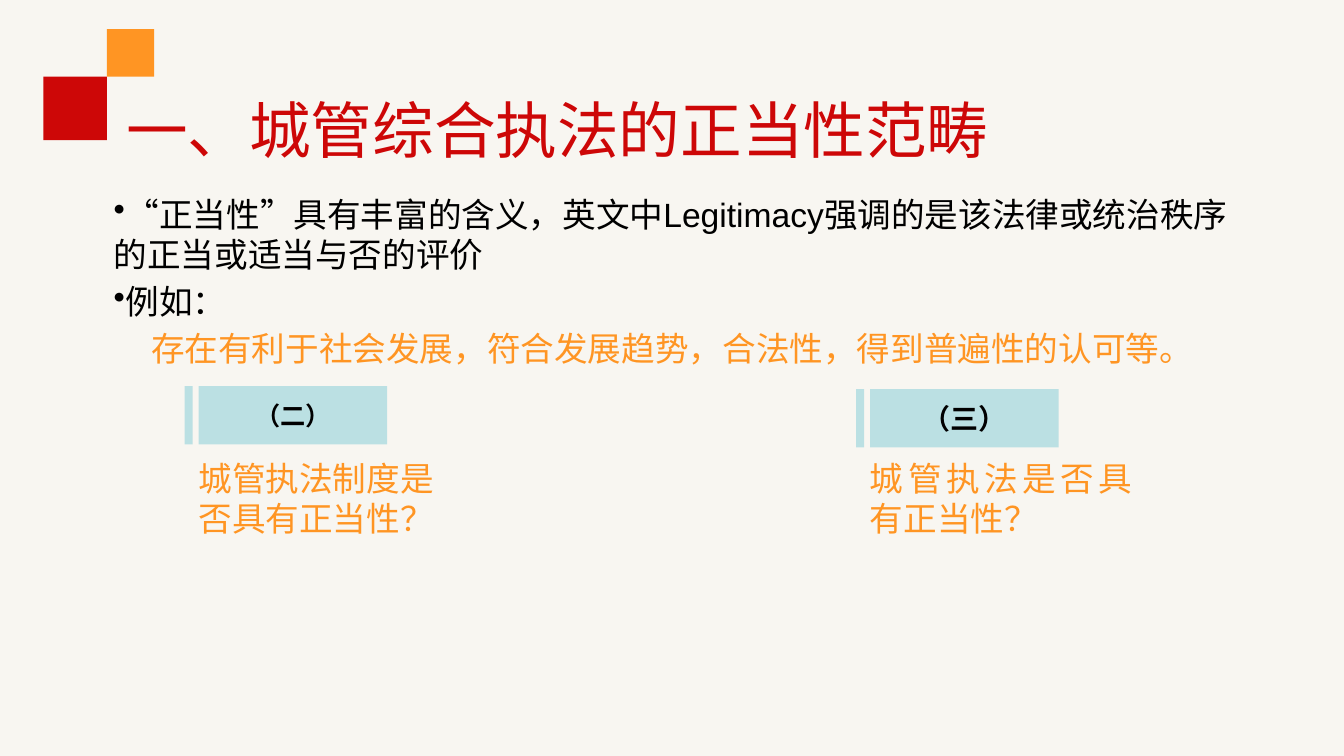
from lxml import etree
from pptx import Presentation
from pptx.dml.color import RGBColor
from pptx.enum import shapes, text
from pptx.oxml.ns import qn
from pptx.util import Inches, Pt

RED, ORANGE, BLUE, BLACK, CREAM = "CD0707", "FF9523", "BBE0E3", "000000", "F8F6F1"
FONT = "Arial"

# Content
TITLE = "一、城管综合执法的正当性范畴"
BODY = [  # wording, colour, bulleted, first-line indent
    ("“正当性”具有丰富的含义，英文中Legitimacy强调的是该法律或统治秩序的正当或适当与否的评价", BLACK, True, 0),
    ("例如：", BLACK, True, 0),
    ("存在有利于社会发展，符合发展趋势，合法性，得到普遍性的认可等。", ORANGE, False, 0.37),
]
LEFT, JUSTIFY = text.PP_ALIGN.LEFT, text.PP_ALIGN.JUSTIFY
CARDS = [  # left, top, label, label size, question, alignment
    (1.83, 3.83, "（二）", 18, "城管执法制度是否具有正当性？", LEFT),
    (8.49, 3.86, "（三）", 20, "城管执法是否具有正当性？", JUSTIFY),
]
QUESTION_TOP = 4.49
SQUARES = [(0.43, 0.76, 0.63, RED), (1.06, 0.29, 0.47, ORANGE)]


def colour(value):
    return RGBColor.from_string(value)


def add_block(page, left, top, width, height, fill):
    block = page.shapes.add_shape(
        shapes.MSO_SHAPE.RECTANGLE, *map(Inches, (left, top, width, height)))
    block.shadow.inherit = False
    block.fill.solid()
    block.fill.fore_color.rgb = colour(fill)
    block.line.fill.background()
    return block


def add_text_box(page, left, top, width, height):
    box = page.shapes.add_textbox(*map(Inches, (left, top, width, height)))
    box.text_frame.word_wrap = True
    return box.text_frame


def write(para, words, size, ink, align=LEFT, bold=False):
    para.text = words
    para.alignment = align
    para.font.name = FONT
    para.font.size = Pt(size)
    para.font.bold = bold
    para.font.color.rgb = colour(ink)


def set_indent(para, indent, bulleted):
    properties = para._p.get_or_add_pPr()
    properties.set("marL", "0")
    properties.set("indent", str(Inches(indent)))
    if bulleted:
        etree.SubElement(properties, qn("a:buChar")).set("char", "•")


deck = Presentation()
deck.slide_width, deck.slide_height = Inches(13.33), Inches(7.5)
page = deck.slides.add_slide(deck.slide_layouts[5])
page.background.fill.solid()
page.background.fill.fore_color.rgb = colour(CREAM)

# Corner squares
for left, top, side, fill in SQUARES:
    add_block(page, left, top, side, side, fill)

# Title
title = page.shapes.title
title.left, title.top, title.width, title.height = map(Inches, (1.15, 0.55, 11.27, 1.16))
frame = title.text_frame
frame.auto_size = text.MSO_AUTO_SIZE.NONE
frame.vertical_anchor = text.MSO_ANCHOR.BOTTOM
write(frame.paragraphs[0], TITLE, 44, RED)
frame.paragraphs[0].line_spacing = 0.9

# Body
frame = add_text_box(page, 1.03, 1.87, 11.27, 4.5)
for number, (words, ink, bulleted, indent) in enumerate(BODY):
    para = frame.add_paragraph() if number else frame.paragraphs[0]
    set_indent(para, indent, bulleted)
    para.space_before = Pt(5)
    write(para, words, 24, ink)

# Question cards: stripe, label, question
for left, top, label, size, question, align in CARDS:
    add_block(page, left, top, 0.08, 0.58, BLUE)
    block = add_block(page, left + 0.14, top, 1.87, 0.58, BLUE)
    block.text_frame.vertical_anchor = text.MSO_ANCHOR.MIDDLE
    write(block.text_frame.paragraphs[0], label, size, BLACK, text.PP_ALIGN.CENTER, True)
    frame = add_text_box(page, left + 0.04, QUESTION_TOP, 2.8, 1.31)
    frame.paragraphs[0].space_before = Pt(5)
    write(frame.paragraphs[0], question, 24, ORANGE, align)

deck.save("out.pptx")
